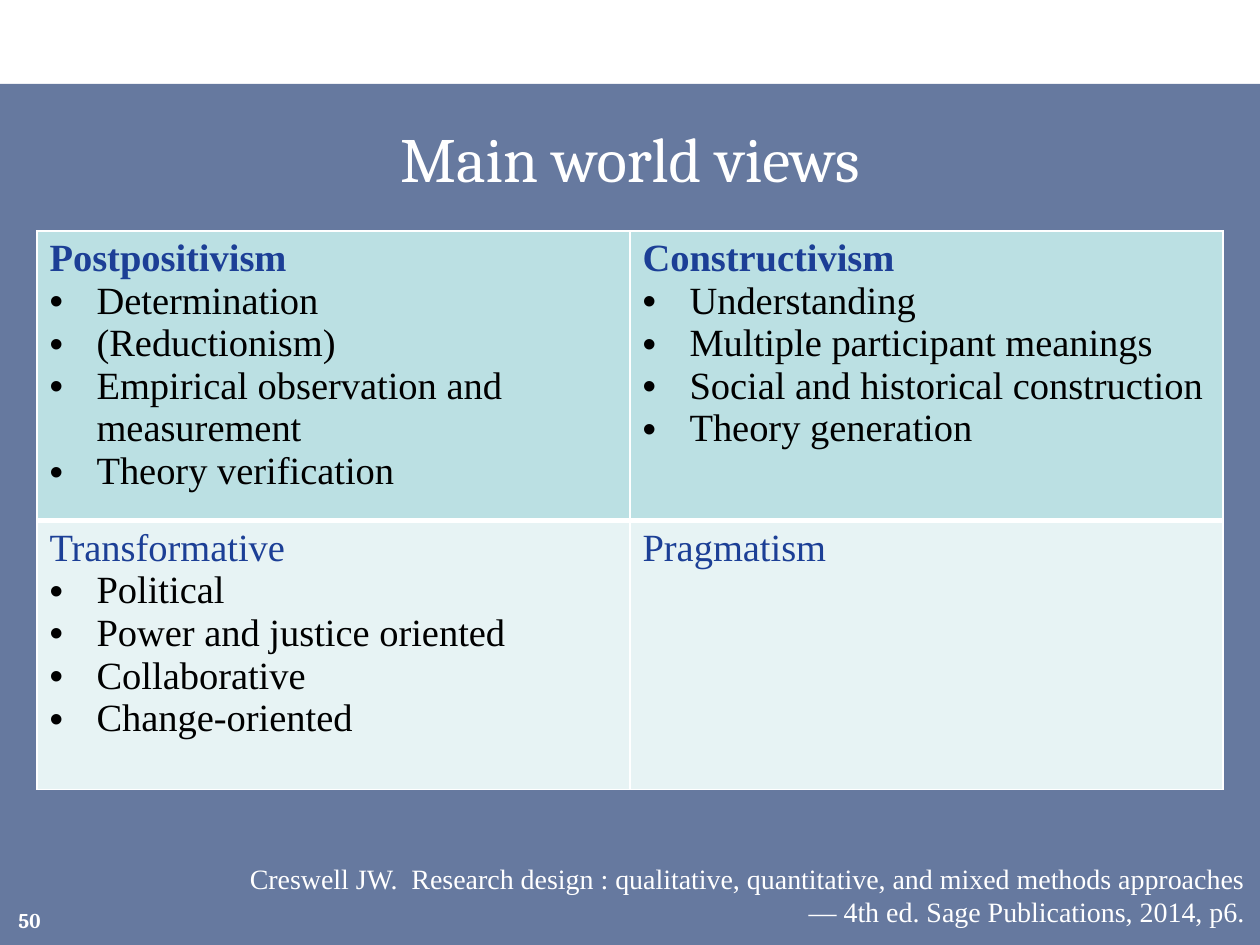
from lxml import etree
from pptx import Presentation
from pptx.dml.color import RGBColor
from pptx.enum.shapes import MSO_SHAPE
from pptx.enum.text import MSO_ANCHOR, PP_ALIGN
from pptx.oxml.ns import qn
from pptx.util import Pt

RECT = MSO_SHAPE.RECTANGLE
TOP, MIDDLE = MSO_ANCHOR.TOP, MSO_ANCHOR.MIDDLE
CENTER, RIGHT = PP_ALIGN.CENTER, PP_ALIGN.RIGHT
SCALE = 914400 / 126
SERIF, TIMES = "Cambria", "Times New Roman"
COLORS = {"navy": "002060", "white": "FFFFFF", "black": "000000",
          "blue": "1C3F96", "teal": "BBE0E3", "pale": "E7F3F4"}
VIEWS = [
    [("Postpositivism", ["Determination", "(Reductionism)",
                         "Empirical observation and measurement",
                         "Theory verification"]),
     ("Constructivism", ["Understanding", "Multiple participant meanings",
                         "Social and historical construction",
                         "Theory generation"])],
    [("Transformative", ["Political", "Power and justice oriented",
                         "Collaborative", "Change-oriented"]),
     ("Pragmatism", [])],
]


def px(n):
    return round(n * SCALE)


def color(name):
    return RGBColor.from_string(COLORS[name])


def style(para, face, size, tint, bold=False):
    for run in para.runs:
        font = run.font
        font.name, font.size, font.bold = face, Pt(size), bold
        font.color.rgb = color(tint)


def add_panel(slide, box):
    """Backdrop in navy at 60 % opacity."""
    panel = slide.shapes.add_shape(RECT, *map(px, box))
    panel.shadow.inherit = False
    panel.fill.solid()
    panel.fill.fore_color.rgb = color("navy")
    panel.line.fill.background()
    tint = next(panel.fill._xPr.iter(qn("a:srgbClr")))
    etree.SubElement(tint, qn("a:alpha"), val="60000")


def add_label(slide, box, text, face, size, align, anchor, bold=False):
    frame = slide.shapes.add_textbox(*map(px, box)).text_frame
    frame.word_wrap = True
    frame.vertical_anchor = anchor
    frame.text = text
    para = frame.paragraphs[0]
    para.alignment = align
    style(para, face, size, "white", bold)


def add_bullet(para):
    props = para._p.get_or_add_pPr()
    props.set("marL", str(px(47)))
    props.set("indent", str(-px(47)))
    etree.SubElement(props, qn("a:buFont"), typeface="Arial")
    etree.SubElement(props, qn("a:buChar"), char="•")


def add_edges(cell, widths):
    props = cell._tc.get_or_add_tcPr()
    for side, width in widths.items():
        line = etree.SubElement(props, qn(f"a:ln{side}"), w=str(Pt(width)))
        fill = etree.SubElement(line, qn("a:solidFill"))
        etree.SubElement(fill, qn("a:srgbClr"), val=COLORS["white"])


def fill_cell(cell, head, points, tint, bold):
    cell.fill.solid()
    cell.fill.fore_color.rgb = color(tint)
    frame = cell.text_frame
    frame.text = "\n".join([head, *points])
    first, *rest = frame.paragraphs
    style(first, TIMES, 22, "blue", bold)
    for para in rest:
        add_bullet(para)
        style(para, TIMES, 22, "black")


def add_views(slide, box):
    left, top, width, height = box
    rows, cols = len(VIEWS), len(VIEWS[0])
    table = slide.shapes.add_table(rows, cols, *map(px, box)).table
    for col in table.columns:
        col.width = px(width / cols)
    for r, views in enumerate(VIEWS):
        table.rows[r].height = px(height / rows)
        is_head = r == 0
        edges = {"L": 1, "R": 1, "T": 1 if is_head else 3,
                 "B": 3 if is_head else 1}
        for c, (head, points) in enumerate(views):
            cell = table.cell(r, c)
            add_edges(cell, edges)
            fill_cell(cell, head, points, "teal" if is_head else "pale",
                      is_head)


def main():
    deck = Presentation()
    deck.slide_width, deck.slide_height = px(1260), px(945)
    slide = deck.slides.add_slide(deck.slide_layouts[6])
    add_panel(slide, (0, 84, 1260, 861))
    add_label(slide, (32, 105, 1196, 105), "Main world views",
              SERIF, 36, CENTER, MIDDLE)
    add_views(slide, (37, 231, 1186, 538))
    add_label(slide, (218, 855, 1039, 80),
              "Creswell JW.  Research design : qualitative, quantitative, and "
              "mixed methods approaches— 4th ed. Sage Publications, 2014, p6.",
              TIMES, 16, RIGHT, TOP)
    add_label(slide, (0, 895, 53, 50), "50", SERIF, 12, RIGHT, MIDDLE, True)
    deck.save("out.pptx")


if __name__ == "__main__":
    main()
